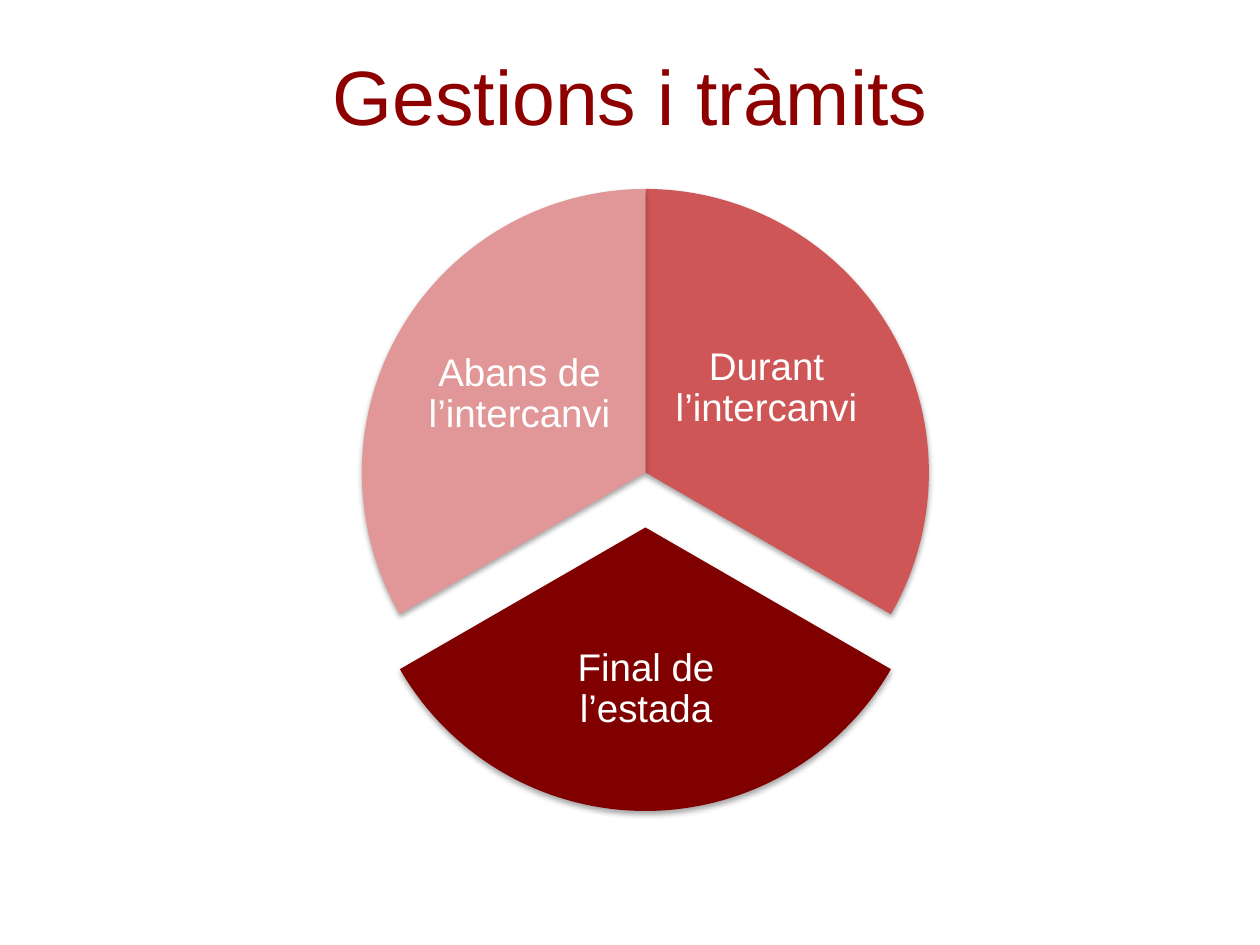
import pptx
import pptx.dml.color
import pptx.enum.shapes
import pptx.enum.text
import pptx.oxml
import pptx.oxml.ns
import pptx.util

PX = 914400 / 126
THEME = {
    "font": "Arial",
    "title": "8E0000",
    "label": "FFFFFF",
    "before": "E19797",
    "during": "CE5656",
    "end": "800000",
    "big": 44,
    "small": 22,
}
SHADOW = (
    '<a:outerShdw %s blurRad="39370" dist="22860" dir="5400000" rotWithShape="0">'
    '<a:srgbClr val="000000"><a:alpha val="35000"/></a:srgbClr></a:outerShdw>'
    % pptx.oxml.ns.nsdecls("a")
)


def scale(*box):
    return [pptx.util.Emu(round(n * PX)) for n in box]


def write(box, words, size, color, inset, spacing):
    frame = slide.shapes.add_textbox(*scale(*box)).text_frame
    frame.word_wrap = True
    frame.vertical_anchor = pptx.enum.text.MSO_ANCHOR.MIDDLE
    frame.margin_left, frame.margin_top, frame.margin_right, frame.margin_bottom = scale(*inset)
    para = frame.paragraphs[0]
    para.alignment = pptx.enum.text.PP_ALIGN.CENTER
    para.line_spacing = spacing
    run = para.add_run()
    run.text = words
    run.font.name = THEME["font"]
    run.font.size = pptx.util.Pt(THEME[size])
    run.font.color.rgb = pptx.dml.color.RGBColor.from_string(THEME[color])


deck = pptx.Presentation()
deck.slide_width, deck.slide_height = scale(1260, 945)
slide = deck.slides.add_slide(deck.slide_layouts[6])

left, top, size, drop = 362, 189, 567, 55
parts = [
    ("during", 270, 0, (670, 294, 193, 189), "Durant l’intercanvi"),
    ("end", 30, drop, (518, 602, 256, 175), "Final de l’estada"),
    ("before", 150, 0, (423, 300, 193, 189), "Abans de l’intercanvi"),
]
for color, start, shift, box, words in parts:
    wedge = slide.shapes.add_shape(
        pptx.enum.shapes.MSO_SHAPE.PIE, *scale(left, top + shift, size, size)
    )
    for i, angle in enumerate((start, (start + 120) % 360)):
        wedge.adjustments[i] = angle * 0.6
    wedge.fill.solid()
    wedge.fill.fore_color.rgb = pptx.dml.color.RGBColor.from_string(THEME[color])
    wedge.line.fill.background()
    wedge.shadow.inherit = False
    effects = wedge._element.spPr.find(pptx.oxml.ns.qn("a:effectLst"))
    effects.append(pptx.oxml.parse_xml(SHADOW))
    write(box, words, "small", "label", (4, 4, 4, 4), 0.9)

write((95, 16, 1071, 158), "Gestions i tràmits", "big", "title", (13, 6, 13, 6), 1.0)

deck.save("out.pptx")
